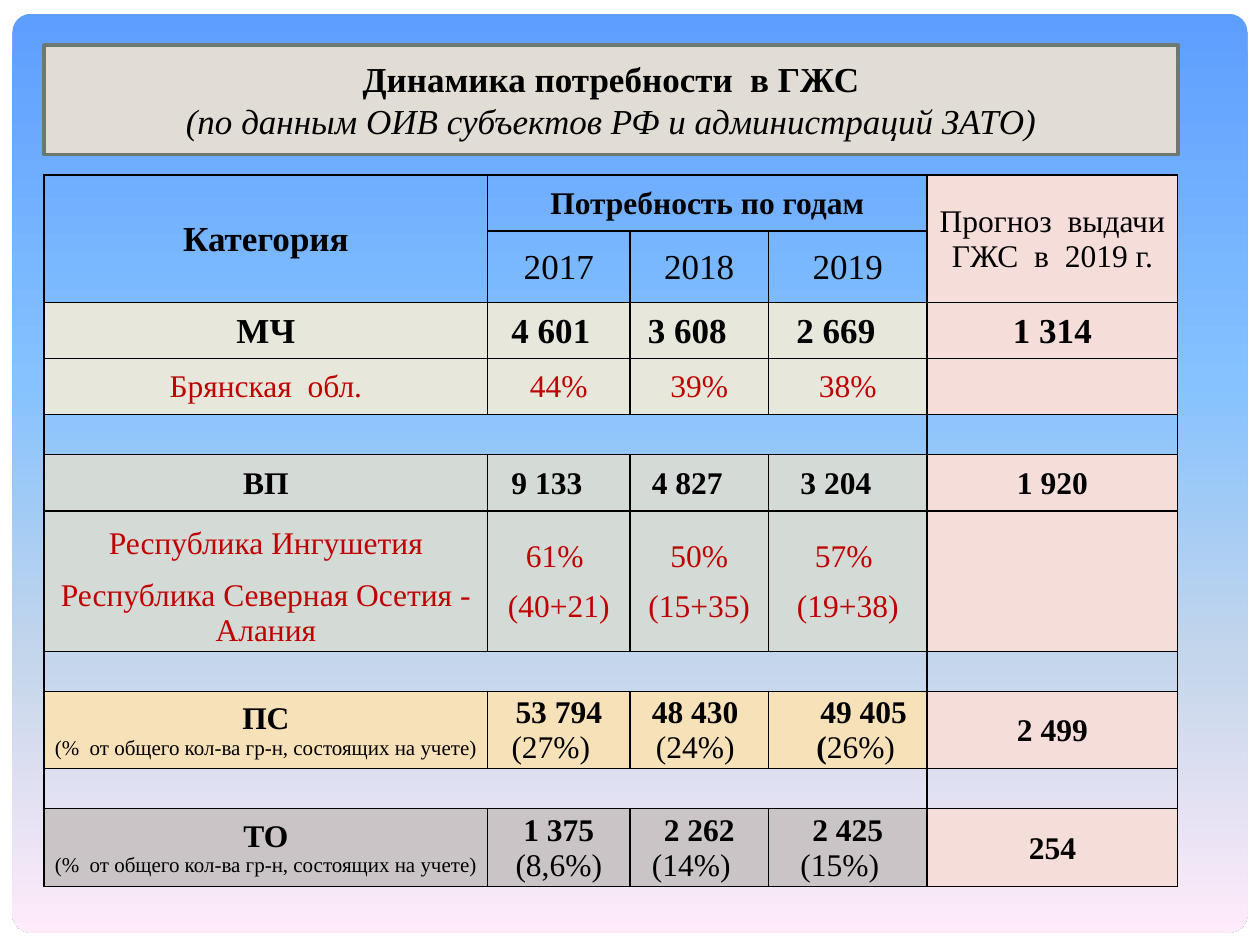
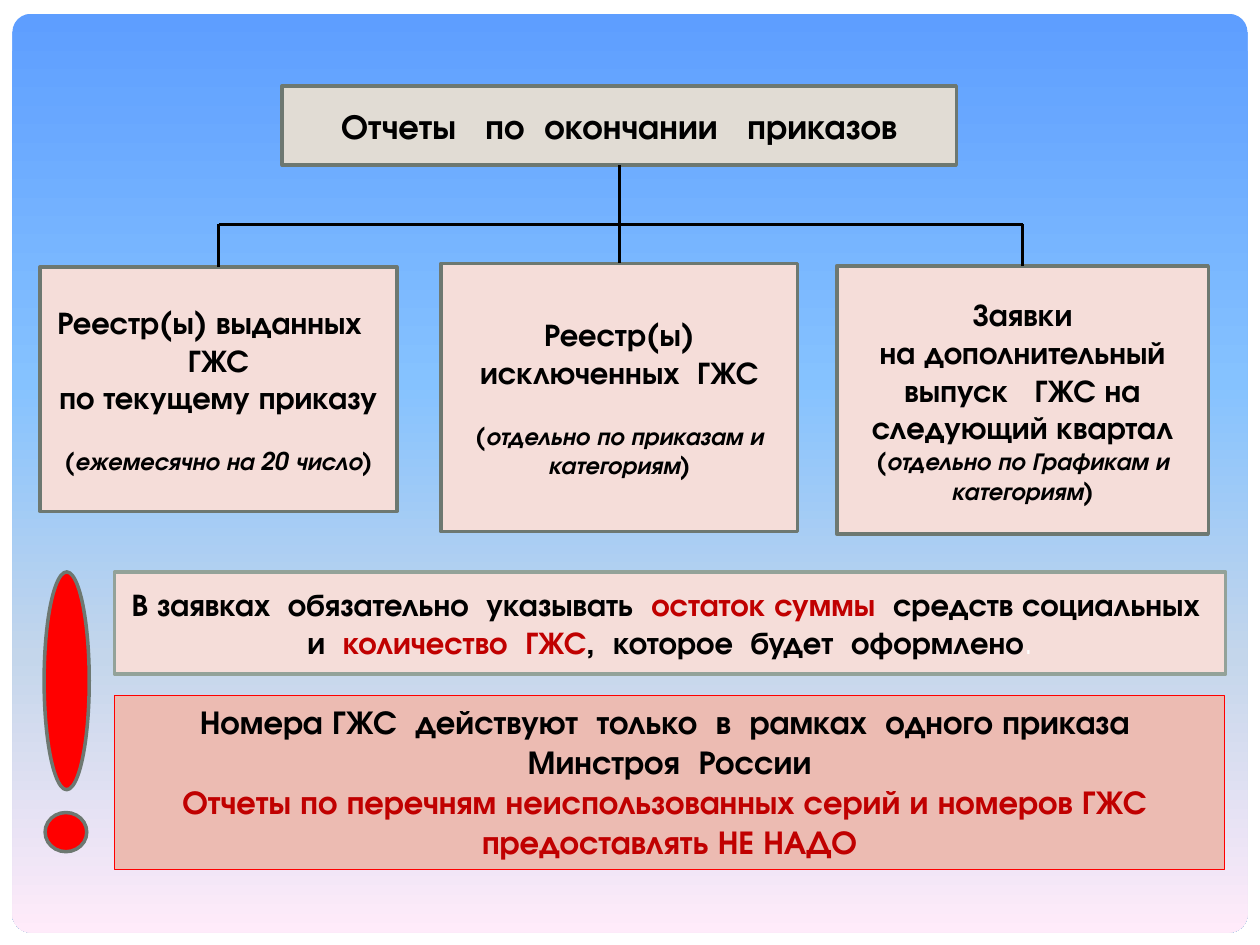
from dataclasses import dataclass

from lxml import etree
from pptx import Presentation
from pptx.dml.color import RGBColor
from pptx.enum.shapes import MSO_CONNECTOR, MSO_SHAPE
from pptx.enum.text import MSO_ANCHOR, PP_ALIGN
from pptx.oxml.ns import qn
from pptx.util import Cm, Pt

RECT, ROUND, OVAL = MSO_SHAPE.RECTANGLE, MSO_SHAPE.ROUNDED_RECTANGLE, MSO_SHAPE.OVAL
STRAIGHT = MSO_CONNECTOR.STRAIGHT
TOP, MIDDLE = MSO_ANCHOR.TOP, MSO_ANCHOR.MIDDLE
CENTER = PP_ALIGN.CENTER


@dataclass(frozen=True)
class Theme:
    serif: str = "Times New Roman"
    sans: str = "TeX Gyre Adventor"
    black: str = "000000"
    white: str = "FFFFFF"
    red: str = "C00000"
    alert: str = "FF0000"
    edge: str = "6D7871"
    sage: str = "93A299"
    stone: str = "E1DCD4"
    rose: str = "F5DDD9"
    coral: str = "ECBBB2"
    ivory: str = "E8E7DC"
    mist: str = "D4DAD6"
    sand: str = "F6E1B8"
    ash: str = "CAC4C6"
    sky: tuple = ((0, "5E9EFF"), (40, "85C2FF"), (70, "C4D6EB"), (100, "FFEBFA"))
    head: int = 20
    mid: int = 19
    body: int = 18
    note: int = 14
    small: int = 12
    half: float = 0.08  # cm that one step of shift moves a line


T = Theme()


@dataclass
class Line:
    """A paragraph; text is a string or a list of (text, colour, bold) runs."""
    text: str | list
    size: int = T.body
    bold: bool = True
    tint: str = T.black
    ital: bool = False
    gap: int = 0
    shift: int = 0


def rgb(code):
    return RGBColor.from_string(code)


# Text
def write(frame, lines, face):
    frame.word_wrap = True
    low = min(0, *(line.shift for line in lines), 0)
    for i, line in enumerate(lines):
        par = frame.paragraphs[0] if i == 0 else frame.add_paragraph()
        par.alignment = CENTER
        par.space_before = Pt(line.gap)
        font = par.font
        font.name, font.size = face, Pt(line.size)
        font.bold, font.italic = line.bold, line.ital
        font.color.rgb = rgb(line.tint)
        if line.shift > low:
            inset = Cm(2 * T.half * (line.shift - low))
            par._p.get_or_add_pPr().set("marL", str(inset))
        if isinstance(line.text, str):
            par.add_run().text = line.text
            continue
        for text, tint, bold in line.text:
            run = par.add_run()
            run.text = text
            run.font.color.rgb = rgb(tint)
            run.font.bold = bold
    return Cm(-2 * T.half * low)


# Shapes
def add_box(slide, kind, at, fill, edge, lines=(), face=T.sans, width=2, anchor=MIDDLE):
    box = slide.shapes.add_shape(kind, *map(Cm, at))
    box.shadow.inherit = False
    box.fill.solid()
    box.fill.fore_color.rgb = rgb(fill)
    box.line.color.rgb = rgb(edge)
    box.line.width = Pt(width)
    if lines:
        box.text_frame.vertical_anchor = anchor
        write(box.text_frame, lines, face)
    return box


def add_line(slide, start, end):
    line = slide.shapes.add_connector(STRAIGHT, *start, *end)
    line.line.color.rgb = rgb(T.black)
    line.line.width = Pt(1.75)
    etree.SubElement(line.element.spPr, qn("a:effectLst"))
    return line


def center(box):
    return box.left + box.width // 2


def add_panel(deck, slide):
    """Rounded gradient panel, moved to the master so every slide shows it."""
    panel = slide.shapes.add_shape(ROUND, *map(Cm, (0.25, 0.28, 24.9, 18.52)))
    panel.adjustments[0] = 0.02
    panel.shadow.inherit = False
    panel.line.fill.background()
    panel.fill.gradient()
    panel.fill.gradient_angle = 270
    stops = panel.element.find(".//" + qn("a:gsLst"))
    for stop in list(stops):
        stops.remove(stop)
    for place, code in T.sky:
        stop = etree.SubElement(stops, qn("a:gs"), pos=str(place * 1000))
        etree.SubElement(stop, qn("a:srgbClr"), val=code)
    panel.element.find(".//" + qn("p:cNvPr")).set("id", "100")
    deck.slide_master.shapes.element.insert(2, panel.element)


# Table
def rule_cell(cell, bare):
    """Draw 1 pt borders, leaving out the side named in bare."""
    props = cell._tc.get_or_add_tcPr()
    for side in "LRTB":
        edge = etree.SubElement(props, qn("a:ln" + side), w=str(Pt(1)))
        if side == bare:
            etree.SubElement(edge, qn("a:noFill"))
        else:
            fill = etree.SubElement(edge, qn("a:solidFill"))
            etree.SubElement(fill, qn("a:srgbClr"), val=T.black)


def add_grid(slide, left, top, cols, rows, spans, bare):
    size = (Cm(sum(cols)), Cm(sum(row[0] for row in rows)))
    grid = slide.shapes.add_table(len(rows), len(cols), Cm(left), Cm(top), *size).table
    grid.first_row = grid.horz_banding = False
    for col, width in zip(grid.columns, cols):
        col.width = Cm(width)
    for r, (height, fill, cells) in enumerate(rows):
        grid.rows[r].height = Cm(height)
        for c in range(len(cols)):
            cell = grid.cell(r, c)
            rule_cell(cell, bare.get((r, c)))
            cell.margin_left = cell.margin_right = cell.margin_top = Cm(0.03)
            cell.margin_bottom = 0
            cell.vertical_anchor = MIDDLE
            tone = T.rose if cells and c == len(cols) - 1 else fill
            if tone:
                cell.fill.solid()
                cell.fill.fore_color.rgb = rgb(tone)
            else:
                cell.fill.background()
            if c < len(cells) and cells[c]:
                cell.margin_right = Cm(0.03) + write(cell.text_frame, cells[c], T.serif)
    for (r, c), (down, across) in spans.items():
        grid.cell(r, c).merge(grid.cell(r + down - 1, c + across - 1))


def big(text, shift=0):
    return [Line(text, T.head, shift=shift)]


def year(text):
    return [Line(text, T.head, bold=False)]


def bold(text, shift=0):
    return [Line(text, shift=shift)]


def red(text, *more, shift=0):
    return [Line(text, bold=False, tint=T.red, shift=shift),
            *(Line(item, bold=False, tint=T.red, gap=9) for item in more)]


def share(count, part, shift=0, move=0):
    return [Line(count, shift=move), Line(part, bold=False, shift=shift)]


def group(name):
    text = "(%  от общего кол-ва гр-н, состоящих на учете)"
    return [Line(name), Line(text, T.small, bold=False)]


def need_slide(slide):
    add_box(slide, RECT, (0.89, 0.91, 22.86, 2.21), T.stone, T.edge, [
        Line("Динамика потребности  в ГЖС", T.head),
        Line("(по данным ОИВ субъектов РФ и администраций ЗАТО)",
             T.head, bold=False, ital=True)], T.serif)
    blank = (0.79, None, ())
    last = [("(", T.black, True), ("26%)", T.black, False)]
    rows = [
        (1.13, None, (big("Категория"), bold("Потребность по годам"), None, None,
                      [Line("Прогноз  выдачи ГЖС  в  2019 г.", bold=False)])),
        (1.43, None, (None, year("2017"), year("2018"), year("2019"), None)),
        (1.13, T.ivory, (big("МЧ"), big("4 601", -2), big("3 608", -3),
                         big("2 669", -3), big("1 314"))),
        (1.13, T.ivory, (red("Брянская  обл."), red("44%"), red("39%"), red("38%"), None)),
        blank,
        (1.14, T.mist, (bold("ВП"), bold("9 133", -3), bold("4 827", -3),
                        bold("3 204", -3), bold("1 920"))),
        (1.28, T.mist, (red("Республика Ингушетия"), red("61%", "(40+21)", shift=-1),
                        red("50%", "(15+35)"), red("57%", "(19+38)", shift=-1), None)),
        (1.55, T.mist, (red("Республика Северная Осетия - Алания"),)),
        blank,
        (1.56, T.sand, (group("ПС"), share("53 794", "(27%)", -2),
                        share("48 430", "(24%)", -1, -1),
                        share("49 405", last, 2, 4), bold("2 499"))),
        blank,
        (1.57, T.ash, (group("ТО"), share("1 375", "(8,6%)"), share("2 262", "(14%)", -2),
                       share("2 425", "(15%)", -2), bold("254"))),
    ]
    spans = {(0, 0): (2, 1), (0, 1): (1, 3), (0, 4): (2, 1)}
    spans |= {(r, 0): (1, 4) for r in (4, 8, 10)}
    spans |= {(6, c): (2, 1) for c in range(1, 5)}
    add_grid(slide, 0.89, 3.53, (8.94, 2.87, 2.79, 3.2, 5.05), rows, spans,
             {(6, 0): "B", (7, 0): "T"})


def report_slide(slide):
    # Chart of reports
    root = add_box(slide, RECT, (5.69, 1.73, 13.59, 1.6), T.stone, T.edge,
                   [Line("Отчеты   по  окончании   приказов", T.head)])
    parts = [
        ((0.81, 5.38, 7.19, 4.93), ["Реестр(ы) выданных   ГЖС", "по текущему приказу"],
         "(ежемесячно на 20 число)", 17),
        ((8.89, 5.31, 7.19, 5.41), ["Реестр(ы) исключенных  ГЖС"],
         "(отдельно по приказам и категориям)", 17),
        ((16.87, 5.36, 7.49, 5.41),
         ["Заявки", "на дополнительный выпуск   ГЖС на следующий квартал"],
         "(отдельно по Графикам и категориям)", 0),
    ]
    left, mid, right = [
        add_box(slide, RECT, at, T.rose, T.edge,
                [*map(Line, names), Line(note, T.note, ital=True, gap=gap)])
        for at, names, note, gap in parts]

    # Branches
    bus = Cm(4.52)
    add_line(slide, (center(left), bus), (center(right), bus))
    for box in (left, right):
        add_line(slide, (center(box), bus), (center(box), box.top)).end_connect(box, 0)
    stem = add_line(slide, (center(root), root.top + root.height), (center(mid), mid.top))
    stem.begin_connect(root, 2)
    stem.end_connect(mid, 0)

    # Notices
    add_box(slide, RECT, (2.31, 11.53, 22.4, 2.06), T.rose, T.sage, [Line([
        ("В заявках  обязательно  указывать  ", T.black, True),
        ("остаток суммы  ", T.red, True),
        ("средств социальных  и  ", T.black, True),
        ("количество  ГЖС", T.red, True),
        (",  которое  будет  оформлено", T.black, True),
        (".", T.white, False)])])
    add_box(slide, RECT, (2.31, 14.02, 22.38, 3.51), T.coral, T.alert, [
        Line("Номера ГЖС  действуют  только  в  рамках  одного приказа  Минстроя  России",
             T.mid),
        Line("Отчеты по перечням неиспользованных серий и номеров ГЖС  предоставлять НЕ НАДО",
             T.mid, tint=T.red)], width=0.75, anchor=TOP)

    # Exclamation mark
    for at in ((0.89, 11.53, 0.91, 4.39), (0.91, 16.38, 0.84, 0.79)):
        add_box(slide, OVAL, at, T.alert, T.edge)


def main():
    deck = Presentation()
    deck.slide_width, deck.slide_height = Cm(25.4), Cm(19.05)
    need, report = [deck.slides.add_slide(deck.slide_layouts[6]) for _ in range(2)]
    add_panel(deck, need)
    need_slide(need)
    report_slide(report)
    deck.save("out.pptx")


if __name__ == "__main__":
    main()
